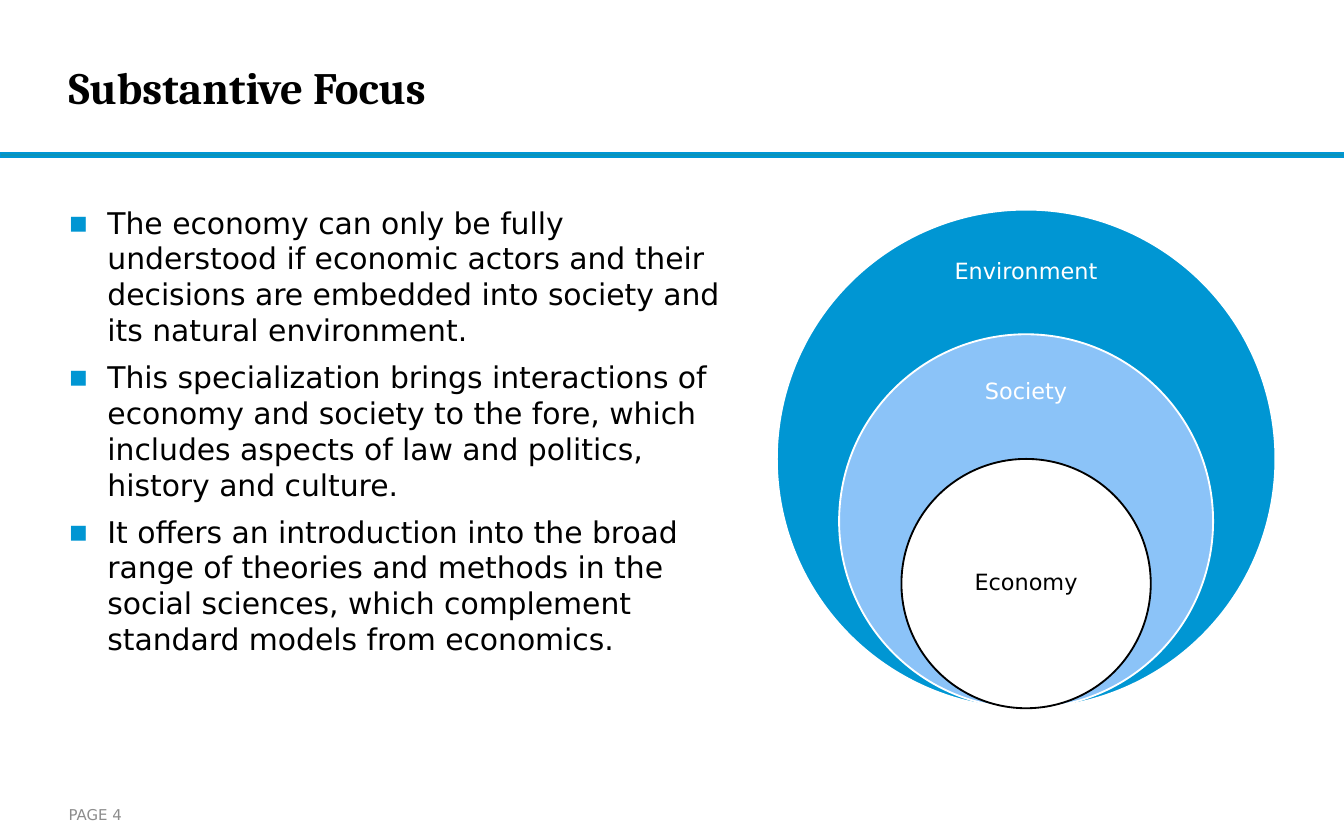
import lxml.etree
import pptx
import pptx.dml.color
import pptx.enum.shapes
import pptx.enum.text
import pptx.oxml.ns
import pptx.util

Inches = pptx.util.Inches
Pt = pptx.util.Pt
ALIGN = pptx.enum.text.PP_ALIGN
ANCHOR = pptx.enum.text.MSO_ANCHOR
SHAPE = pptx.enum.shapes.MSO_SHAPE

BLUE, LIGHT_BLUE, TEAL = "0096D3", "8BC3F8", "0C94B7"
BLACK, WHITE, GRAY = "000000", "FFFFFF", "8C8C8C"
BODY_FONT, TITLE_FONT = "DejaVu Sans", "Cambria"
LEFT = 0.51

POINTS = [
    "The economy can only be fully understood if economic actors and their "
    "decisions are embedded into society and its natural environment.",
    "This specialization brings interactions of economy and society to the "
    "fore, which includes aspects of law and politics, history and culture.",
    "It offers an introduction into the broad range of theories and methods in "
    "the social sciences, which complement standard models from economics.",
]
# label, diameter share, fill, line, text colour, label top and height as shares of its circle
CIRCLES = [
    ("Environment", 1, BLUE, WHITE, WHITE, 0.05, 0.15),
    ("Society", 0.75, LIGHT_BLUE, WHITE, WHITE, 0.06, 0.19),
    ("Economy", 0.5, WHITE, BLACK, BLACK, 0.25, 0.5),
]


def color(value):
    return pptx.dml.color.RGBColor.from_string(value)


def prepare_frame(box, side, end, anchor=ANCHOR.MIDDLE):
    """Set wrapping, insets and anchor; return the text frame."""
    frame = box.text_frame
    frame.word_wrap = True
    frame.auto_size = pptx.enum.text.MSO_AUTO_SIZE.NONE
    frame.margin_left = frame.margin_right = Inches(side)
    frame.margin_top = frame.margin_bottom = Inches(end)
    frame.vertical_anchor = anchor
    return frame


def add_span(para, text, size, fill, font=BODY_FONT, bold=False):
    span = para.add_run()
    span.text = text
    span.font.name = font
    span.font.size = Pt(size)
    span.font.bold = bold
    span.font.color.rgb = color(fill)


def add_solid(page, kind, box, fill, line):
    solid = page.shapes.add_shape(kind, *map(Inches, box))
    solid.shadow.inherit = False
    solid.fill.solid()
    solid.fill.fore_color.rgb = color(fill)
    solid.line.color.rgb = color(line)
    solid.line.width = Pt(1)


def add_bullet(para, indent):
    props = para._p.get_or_add_pPr()
    props.set("marL", str(Inches(indent)))
    props.set("indent", str(-Inches(indent)))
    qn = pptx.oxml.ns.qn
    tint = lxml.etree.SubElement(props, qn("a:buClr"))
    lxml.etree.SubElement(tint, qn("a:srgbClr"), val=BLUE)
    lxml.etree.SubElement(props, qn("a:buFont"), typeface=BODY_FONT)
    lxml.etree.SubElement(props, qn("a:buChar"), char="▪")


def place_title(page, box):
    title = page.shapes.title
    title.left, title.top, title.width, title.height = map(Inches, box)
    para = prepare_frame(title, 0, 0).paragraphs[0]
    para.alignment = ALIGN.LEFT
    add_span(para, "Substantive Focus", 24, BLACK, TITLE_FONT, True)


def place_points(page, box):
    body = page.shapes.add_textbox(*map(Inches, box))
    frame = prepare_frame(body, 0, 0.05, ANCHOR.TOP)
    for index, text in enumerate(POINTS):
        para = frame.add_paragraph() if index else frame.paragraphs[0]
        add_bullet(para, 0.29)
        para.space_after = Pt(6)
        add_span(para, text, 16, BLACK)


def place_circles(page, box):
    """Nest the circles so that they share their lowest point."""
    left, top, width, height = box
    label_width = 0.35 * width
    for label, share, fill, line, ink, label_top, label_height in CIRCLES:
        size = share * width
        circle_top = top + height - size
        add_solid(page, SHAPE.OVAL,
                  (left + (width - size) / 2, circle_top, size, size), fill, line)
        label_box = (left + (width - label_width) / 2, circle_top + label_top * size,
                     label_width, label_height * size)
        caption = page.shapes.add_textbox(*map(Inches, label_box))
        para = prepare_frame(caption, 0.09, 0.09).paragraphs[0]
        para.alignment = ALIGN.CENTER
        para.line_spacing = 0.9
        add_span(para, label, 12, ink)


def place_page_number(page, box):
    footer = page.shapes.add_textbox(*map(Inches, box))
    add_span(prepare_frame(footer, 0, 0.05).paragraphs[0], "PAGE 4", 8, GRAY)


def main():
    deck = pptx.Presentation()
    deck.slide_width, deck.slide_height = Inches(10), Inches(6.25)
    page = deck.slides.add_slide(deck.slide_layouts.get_by_name("Title Only"))
    add_solid(page, SHAPE.RECTANGLE, (0, 1.14, 10, 0.03), TEAL, BLUE)
    place_title(page, (LEFT, 0.15, 7.48, 0.99))
    place_points(page, (LEFT, 1.47, 4.96, 4.22))
    place_circles(page, (5.78, 1.56, 3.71, 3.71))
    place_page_number(page, (LEFT, 5.92, 0.98, 0.28))
    deck.save("out.pptx")


if __name__ == "__main__":
    main()
